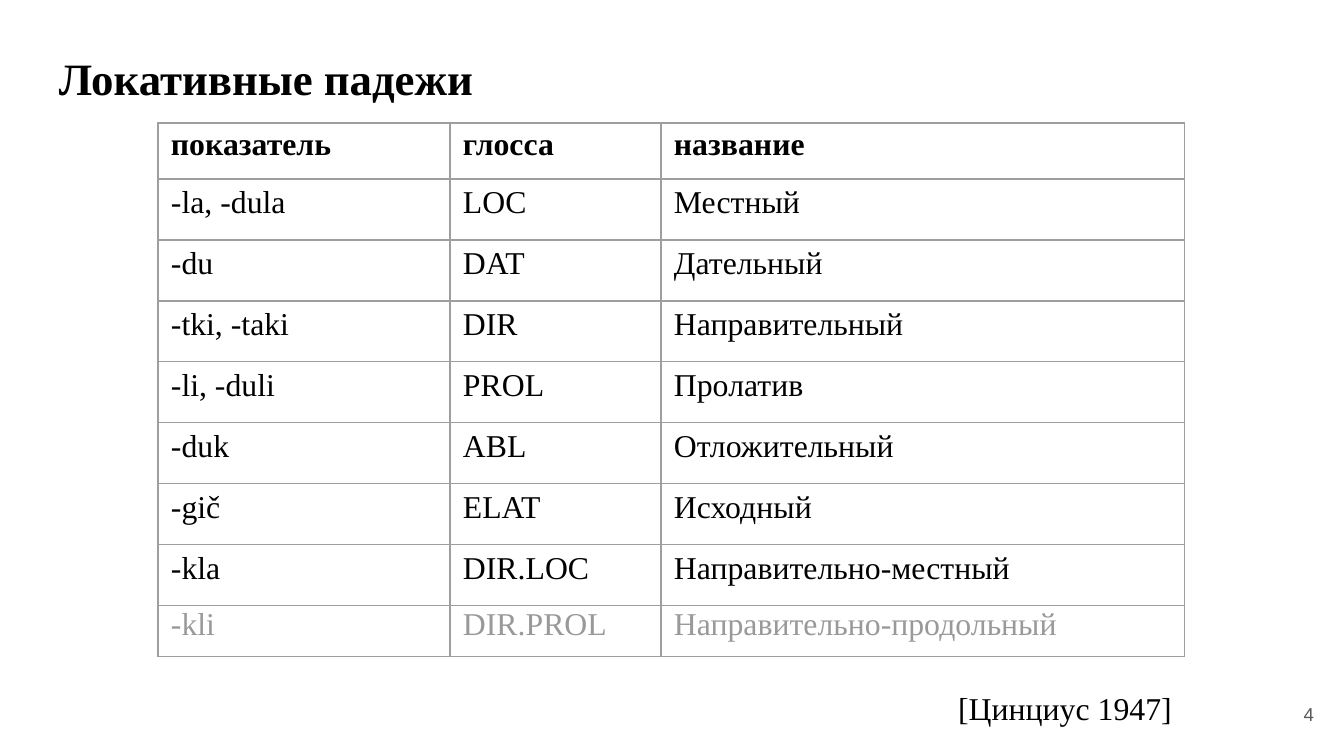
import pptx
import pptx.dml.color
import pptx.enum.text
import pptx.oxml
import pptx.oxml.ns
import pptx.util

PX = 9144000 / 1344
BLACK = pptx.dml.color.RGBColor(0x00, 0x00, 0x00)
WHITE = pptx.dml.color.RGBColor(0xFF, 0xFF, 0xFF)
FADED = pptx.dml.color.RGBColor(0x99, 0x99, 0x99)
NUMBER_GREY = pptx.dml.color.RGBColor(0x59, 0x59, 0x59)
BORDER = pptx.dml.color.RGBColor(0x9E, 0x9E, 0x9E)
SERIF = "Times New Roman"
ALIGN = pptx.enum.text.PP_ALIGN
ANCHOR = pptx.enum.text.MSO_ANCHOR


def px(*lengths):
    return [pptx.util.Emu(round(length * PX)) for length in lengths]


def write(frame, text, size, color, font=SERIF, bold=False, align=ALIGN.LEFT, spacing=1.0):
    para = frame.paragraphs[0]
    para.alignment = align
    para.line_spacing = spacing
    span = para.add_run()
    span.text = text
    span.font.color.rgb = color
    values = {"name": font, "size": pptx.util.Pt(size), "bold": bold}
    for name, value in values.items():
        setattr(span.font, name, value)


deck = pptx.Presentation()
deck.slide_width, deck.slide_height = px(1344, 756)
page = deck.slides.add_slide(deck.slide_layouts[5])
page.background.fill.solid()
page.background.fill.fore_color.rgb = WHITE

title = page.shapes.title
title.left, title.top, title.width, title.height = px(46, 30, 1253, 85)
citation = page.shapes.add_textbox(*px(158, 676, 1027, 44))
number = page.shapes.add_textbox(*px(1246, 685, 81, 58))

inset = px(13)[0]
frame_format = {
    "word_wrap": True,
    "auto_size": pptx.enum.text.MSO_AUTO_SIZE.NONE,
    "margin_left": inset,
    "margin_right": inset,
    "margin_top": inset,
    "margin_bottom": inset,
}
for box, anchor in [(title, ANCHOR.TOP), (citation, ANCHOR.TOP), (number, ANCHOR.MIDDLE)]:
    for name, value in frame_format.items():
        setattr(box.text_frame, name, value)
    box.text_frame.vertical_anchor = anchor

write(title.text_frame, "Локативные падежи", 24, BLACK, bold=True, spacing=1.15)
write(citation.text_frame, "[Цинциус 1947]", 17, BLACK, align=ALIGN.RIGHT)
write(number.text_frame, "4", 10, NUMBER_GREY, font="Arial", align=ALIGN.RIGHT)

cases = [
    ("показатель", "глосса", "название"),
    ("-la, -dula", "LOC", "Местный"),
    ("-du", "DAT", "Дательный"),
    ("-tki, -taki", "DIR", "Направительный"),
    ("-li, -duli", "PROL", "Пролатив"),
    ("-duk", "ABL", "Отложительный"),
    ("-gič", "ELAT", "Исходный"),
    ("-kla", "DIR.LOC", "Направительно-местный"),
    ("-kli", "DIR.PROL", "Направительно-продольный"),
]
column_widths = [292, 211, 524]
row_heights = [56] + [61] * 7 + [51]
table = page.shapes.add_table(
    len(cases), len(column_widths), *px(158, 123, sum(column_widths), sum(row_heights))
).table
table.first_row = False
table.horz_banding = False
for column, width in zip(table.columns, px(*column_widths)):
    column.width = width
for row, height in zip(table.rows, px(*row_heights)):
    row.height = height

cell_format = {name: value for name, value in frame_format.items() if name.startswith("margin")}
cell_format["vertical_anchor"] = ANCHOR.MIDDLE
line_width = pptx.util.Pt(0.75)
for row_index, case in enumerate(cases):
    color = FADED if case is cases[-1] else BLACK
    for column_index, text in enumerate(case):
        cell = table.cell(row_index, column_index)
        for name, value in cell_format.items():
            setattr(cell, name, value)
        for side in ("lnL", "lnR", "lnT", "lnB"):
            border = pptx.oxml.parse_xml(
                f'<a:{side} {pptx.oxml.ns.nsdecls("a")} w="{line_width}">'
                f'<a:solidFill><a:srgbClr val="{BORDER}"/></a:solidFill></a:{side}>'
            )
            cell._tc.get_or_add_tcPr().append(border)
        cell.fill.background()
        write(cell.text_frame, text, 17, color, bold=row_index == 0, spacing=0.4)

deck.save("out.pptx")
